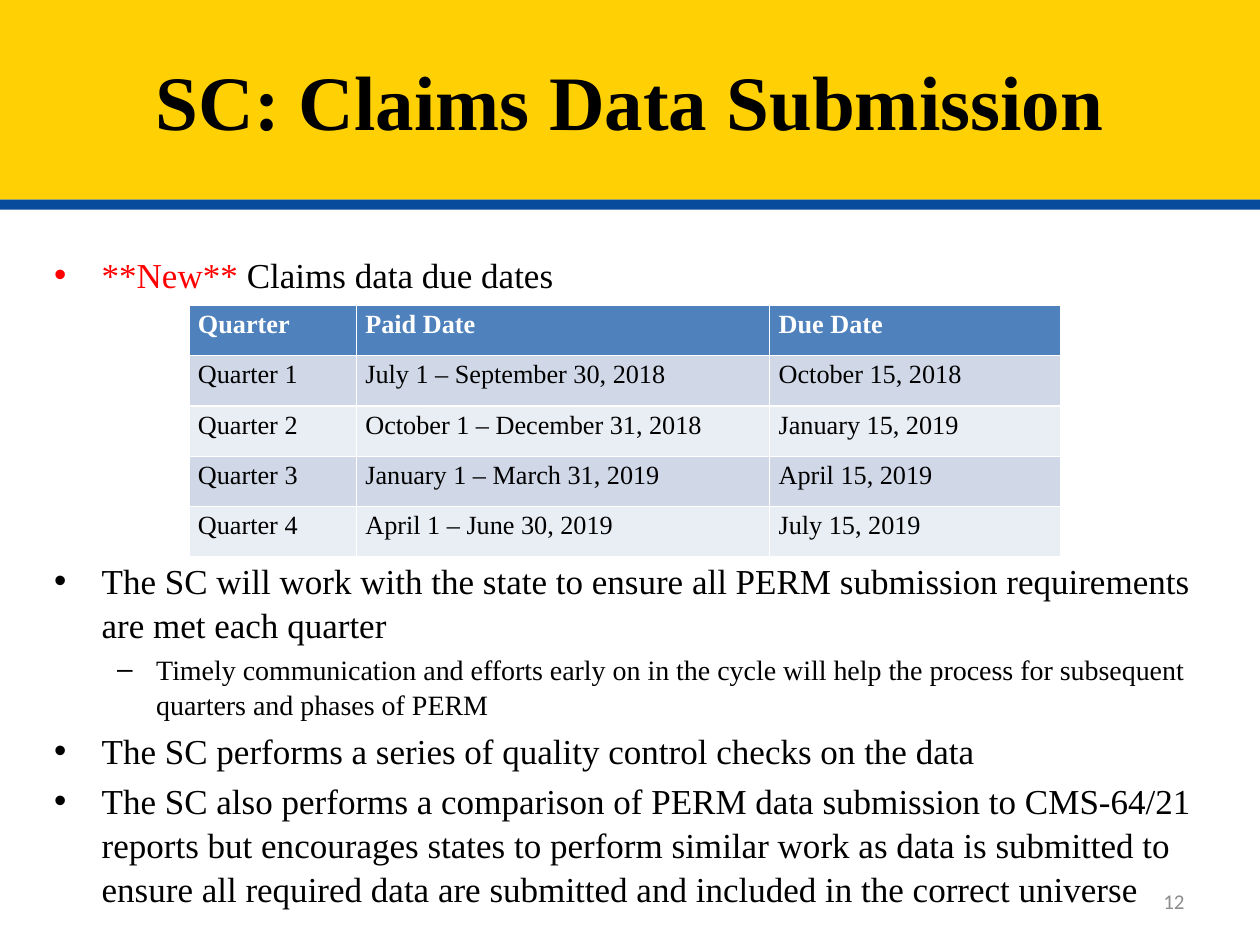
from lxml.etree import SubElement
from pptx import Presentation
from pptx.dml.color import RGBColor
from pptx.enum.shapes import MSO_SHAPE as Shape
from pptx.enum.text import MSO_ANCHOR as Anchor, PP_ALIGN as Align
from pptx.oxml.ns import qn
from pptx.util import Cm, Pt

YELLOW = RGBColor(0xFF, 0xD0, 0x04)
NAVY = RGBColor(0x08, 0x4A, 0x9C)
BLUE = RGBColor(0x4F, 0x81, 0xBD)
BANDS = RGBColor(0xE9, 0xED, 0xF4), RGBColor(0xD0, 0xD8, 0xE8)
RED = RGBColor(0xFF, 0x00, 0x00)
BLACK = RGBColor(0x00, 0x00, 0x00)
WHITE = RGBColor(0xFF, 0xFF, 0xFF)
GRAY = RGBColor(0x8C, 0x8C, 0x8C)
SERIF = "Times New Roman"

LEVELS = [
    {"char": "•", "left": 0.96, "hang": 0.96, "size": 20},
    {"char": "–", "left": 2.06, "hang": 0.79, "size": 16},
]
TABLE_GAP = 150
BULLETS = [
    (0, 4, [("**New** ", RED), ("Claims data due dates", BLACK)]),
    (0, TABLE_GAP, [("The SC will work with the state to ensure all PERM submission "
                     "requirements are met each quarter", BLACK)]),
    (1, 3.2, [("Timely communication and efforts early on in the cycle will help the "
               "process for subsequent quarters and phases of PERM", BLACK)]),
    (0, 4, [("The SC performs a series of quality control checks on the data", BLACK)]),
    (0, 4, [("The SC also performs a comparison of PERM data submission to CMS-64/21 "
             "reports but encourages states to perform similar work as data is submitted "
             "to ensure all required data are submitted and included in the correct "
             "universe", BLACK)]),
]
DUE_DATES = [
    ("Quarter", "Paid Date", "Due Date"),
    ("Quarter 1", "July 1 – September 30, 2018", "October 15, 2018"),
    ("Quarter 2", "October 1 – December 31, 2018", "January 15, 2019"),
    ("Quarter 3", "January 1 – March 31, 2019", "April 15, 2019"),
    ("Quarter 4", "April 1 – June 30, 2019", "July 15, 2019"),
]
COLUMN_SHARES = 0.192, 0.474, 0.334


def add_run(p, text, color, **formats):
    """Append a run with the given colour and font values."""
    r = p.add_run()
    r.text = text
    r.font.color.rgb = color
    for name, value in formats.items():
        setattr(r.font, name, value)


def add_bar(s, left, top, width, height, color):
    """Add a plain filled rectangle."""
    sp = s.shapes.add_shape(Shape.RECTANGLE, Cm(left), Cm(top), Cm(width), Cm(height))
    sp.shadow.inherit = False
    sp.fill.solid()
    sp.fill.fore_color.rgb = color
    sp.line.fill.background()
    return sp


def add_header(s, left, top, width, height):
    """Add the title band with the stripe beneath it."""
    stripe = 0.21
    add_bar(s, left, top + height - stripe, width, stripe, NAVY)
    tf = add_bar(s, left, top, width, height - stripe, YELLOW).text_frame
    tf.word_wrap, tf.vertical_anchor = True, Anchor.MIDDLE
    p = tf.paragraphs[0]
    p.alignment = Align.CENTER
    add_run(p, "SC: Claims Data Submission", BLACK, name=SERIF, size=Pt(44), bold=True)


def set_bullet(p, level):
    """Give a paragraph the marker and hanging indent of its level."""
    pPr = p._p.get_or_add_pPr()
    pPr.set("marL", str(Cm(level["left"])))
    pPr.set("indent", str(-Cm(level["hang"])))
    SubElement(pPr, qn("a:buFont"), typeface="Arial")
    SubElement(pPr, qn("a:buChar"), char=level["char"])


def add_body(s, left, top, width, height):
    """Add the bulleted text, leaving a gap for the table."""
    tf = s.shapes.add_textbox(Cm(left), Cm(top), Cm(width), Cm(height)).text_frame
    tf.word_wrap = True
    for i, (depth, before, runs) in enumerate(BULLETS):
        p = tf.add_paragraph() if i else tf.paragraphs[0]
        p.level, p.space_before, p.line_spacing = depth, Pt(before), 1.04
        set_bullet(p, LEVELS[depth])
        for text, color in runs:
            add_run(p, text, color, name=SERIF, size=Pt(LEVELS[depth]["size"]))


def add_due_dates(s, left, top, width, height):
    """Add the table of paid and due dates by quarter."""
    table = s.shapes.add_table(len(DUE_DATES), len(COLUMN_SHARES),
                               Cm(left), Cm(top), Cm(width), Cm(height)).table
    for column, share in zip(table.columns, COLUMN_SHARES):
        column.width = Cm(width * share)
    margins = {"margin_left": 0.18, "margin_right": 0.18,
               "margin_top": 0.1, "margin_bottom": 0.1}
    for i, row in enumerate(DUE_DATES):
        for j, text in enumerate(row):
            cell = table.cell(i, j)
            for name, value in margins.items():
                setattr(cell, name, Cm(value))
            cell.fill.solid()
            cell.fill.fore_color.rgb = BANDS[i % 2] if i else BLUE
            add_run(cell.text_frame.paragraphs[0], text, BLACK if i else WHITE,
                    name=SERIF, size=Pt(15), bold=i == 0)


def add_page_number(s, left, top, width, height):
    """Add the right-aligned page number."""
    tf = s.shapes.add_textbox(Cm(left), Cm(top), Cm(width), Cm(height)).text_frame
    tf.word_wrap, tf.vertical_anchor = True, Anchor.MIDDLE
    p = tf.paragraphs[0]
    p.alignment = Align.RIGHT
    add_run(p, "12", GRAY, name="Calibri", size=Pt(12))


def main():
    """Build the slide and save it."""
    prs = Presentation()
    prs.slide_width, prs.slide_height = Cm(25.4), Cm(19.05)
    s = prs.slides.add_slide(prs.slide_layouts[6])
    add_body(s, 0.84, 4.95, 23.7, 13.03)
    add_header(s, 0, 0, 25.4, 4.23)
    add_page_number(s, 18.2, 17.66, 5.93, 1.01)
    add_due_dates(s, 3.81, 6.15, 17.58, 5.08)
    prs.save("out.pptx")


if __name__ == "__main__":
    main()
